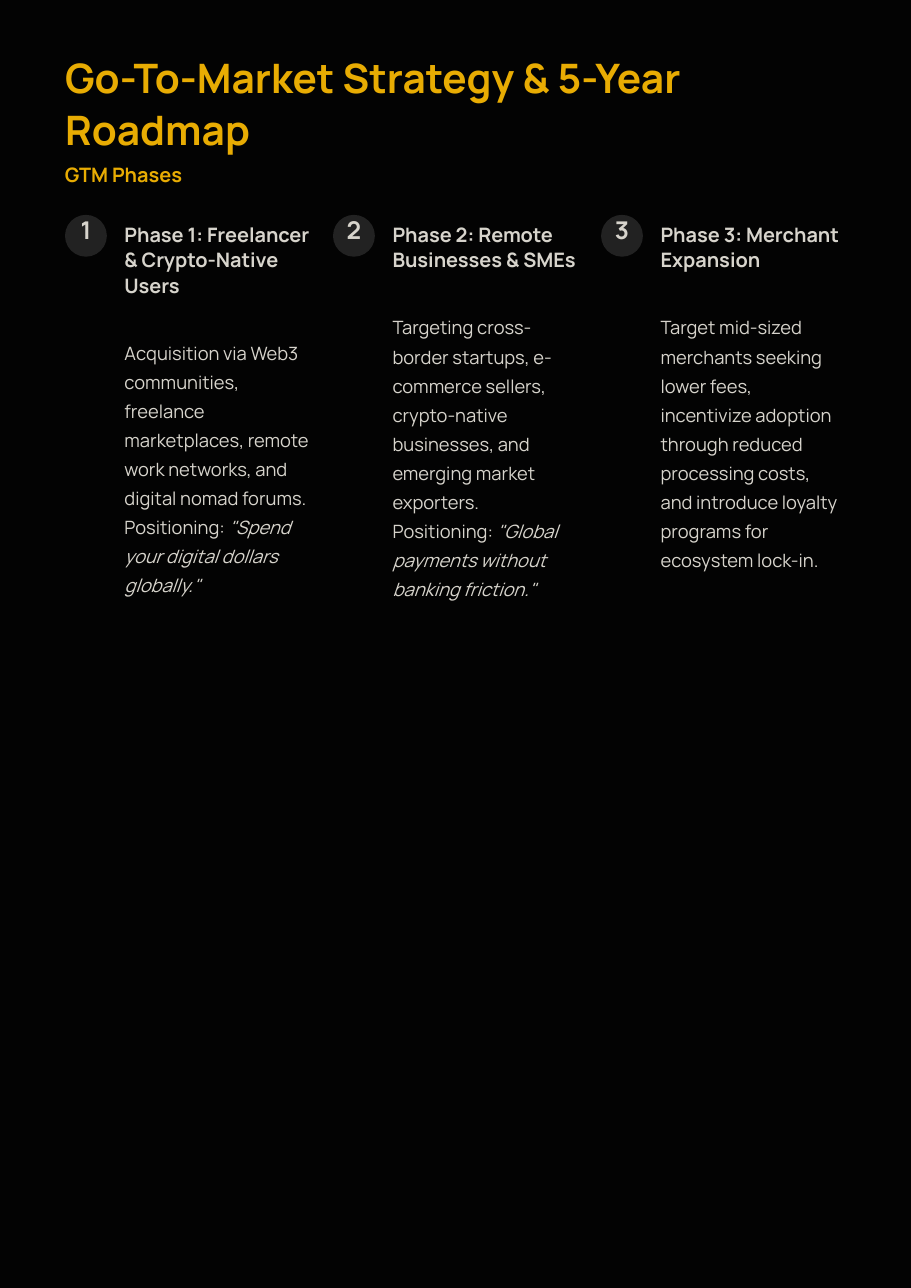
from pptx import Presentation
from pptx.dml.color import RGBColor
from pptx.enum.shapes import MSO_SHAPE
from pptx.enum.text import MSO_ANCHOR, MSO_AUTO_SIZE, PP_ALIGN
from pptx.util import Inches, Pt

TITLE = "Go-To-Market Strategy & 5-Year Roadmap"
SUBTITLE = "GTM Phases"
PHASES = [
    {"head": "Phase 1: Freelancer & Crypto-Native Users", "head_lines": 3, "body_h": 2.69,
     "body": "Acquisition via Web3 communities, freelance marketplaces, remote work networks, "
             "and digital nomad forums. Positioning: ",
     "quote": '"Spend your digital dollars globally."'},
    {"head": "Phase 2: Remote Businesses & SMEs", "head_lines": 2, "body_h": 2.69,
     "body": "Targeting cross-border startups, e-commerce sellers, crypto-native businesses, "
             "and emerging market exporters. Positioning: ",
     "quote": '"Global payments without banking friction."'},
    {"head": "Phase 3: Merchant Expansion", "head_lines": 2, "body_h": 2.42,
     "body": "Target mid-sized merchants seeking lower fees, incentivize adoption through "
             "reduced processing costs, and introduce loyalty programs for ecosystem lock-in.",
     "quote": ""},
]

GOLD, SAND = RGBColor.from_string("E8AC03"), RGBColor.from_string("D7D4CC")
THEME = {
    "back": RGBColor.from_string("030303"),
    "badge": RGBColor.from_string("222222"),
    "font": "Manrope",
    "title": {"size": 26.5, "line": 33.5, "color": GOLD, "bold": True},
    "subtitle": {"size": 13, "line": 16.5, "color": GOLD, "bold": True},
    "number": {"size": 16, "line": 16, "color": SAND, "bold": True},
    "head": {"size": 13, "line": 16.5, "color": SAND, "bold": True},
    "body": {"size": 12, "line": 19, "color": SAND, "bold": False},
}
LEFT, WIDTH, GAP = 0.59, 7.09, 0.21
BADGE_TOP, BADGE, INDENT = 1.95, 0.38, 0.54
HEAD_TOP, HEAD_W, HEAD_LINE = 2.01, 1.68, 0.23


def write(shape, style, runs, align=PP_ALIGN.LEFT):
    """Fill a shape with one paragraph of (text, italic) runs in a theme style."""
    look = THEME[style]
    tf = shape.text_frame
    frame = {"margin_left": 0, "margin_right": 0, "margin_top": 0, "margin_bottom": 0,
             "word_wrap": True, "auto_size": MSO_AUTO_SIZE.NONE,
             "vertical_anchor": MSO_ANCHOR.TOP}
    for name, value in frame.items():
        setattr(tf, name, value)
    p = tf.paragraphs[0]
    p.alignment, p.line_spacing = align, Pt(look["line"])
    for text, italic in runs:
        r = p.add_run()
        r.text = text
        font = {"name": THEME["font"], "size": Pt(look["size"]),
                "bold": look["bold"], "italic": italic}
        for name, value in font.items():
            setattr(r.font, name, value)
        r.font.color.rgb = look["color"]


def add_text(s, box, style, runs, align=PP_ALIGN.LEFT):
    """Add a text box at (left, top, width, height) inches."""
    write(s.shapes.add_textbox(*map(Inches, box)), style, runs, align)


def add_phase(s, index, phase):
    """Draw one phase column: badge, number, heading and body."""
    left = LEFT + index * (WIDTH + GAP) / len(PHASES)
    badge = s.shapes.add_shape(MSO_SHAPE.ROUNDED_RECTANGLE,
                               *map(Inches, (left, BADGE_TOP, BADGE, BADGE)))
    badge.adjustments[0] = 0.5
    badge.shadow.inherit = False
    badge.fill.solid()
    badge.fill.fore_color.rgb = THEME["badge"]
    badge.line.fill.background()
    add_text(s, (left + 0.08, BADGE_TOP + 0.05, BADGE - 0.16, 0.28), "number",
             [(str(index + 1), False)], PP_ALIGN.CENTER)

    text_left = left + INDENT
    head_h = HEAD_LINE * (phase["head_lines"] + 1)
    add_text(s, (text_left, HEAD_TOP, HEAD_W, head_h), "head", [(phase["head"], False)])
    runs = [(phase["body"], False)]
    if phase["quote"]:
        runs.append((phase["quote"], True))
    body_top = HEAD_TOP + head_h + 0.11
    add_text(s, (text_left, body_top, HEAD_W, phase["body_h"]), "body", runs)


def main():
    """Build and save the slide."""
    prs = Presentation()
    prs.slide_width, prs.slide_height = Inches(8.27), Inches(11.69)
    s = prs.slides.add_slide(prs.slide_layouts[5])
    s.background.fill.solid()
    s.background.fill.fore_color.rgb = THEME["back"]

    title = s.shapes.title
    place = {"left": LEFT, "top": 0.46, "width": WIDTH, "height": 0.93}
    for name, value in place.items():
        setattr(title, name, Inches(value))
    write(title, "title", [(TITLE, False)])
    add_text(s, (LEFT, 1.46, 1.87, 0.23), "subtitle", [(SUBTITLE, False)])
    for index, phase in enumerate(PHASES):
        add_phase(s, index, phase)
    prs.save("out.pptx")


if __name__ == "__main__":
    main()
